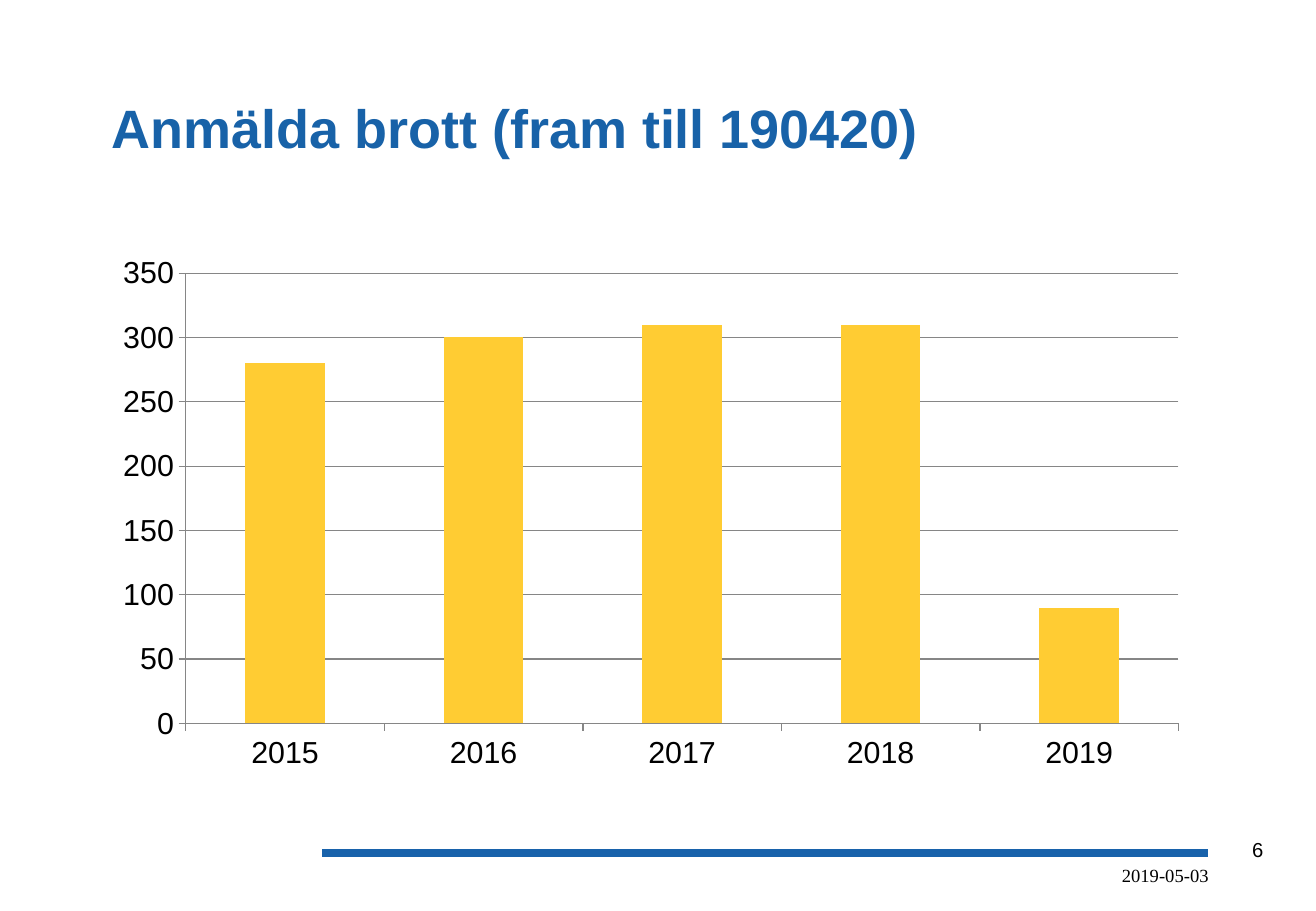
from lxml import etree
from pptx import Presentation
from pptx.chart import data as chart_data
from pptx.dml.color import RGBColor
from pptx.enum import chart as chart_enum, shapes, text
from pptx.oxml import ns
from pptx.util import Pt

BLUE = "1862A8"
RULE_BLUE = "1862AB"
YELLOW = "FFCC33"
GREY = "868686"
BLACK = "000000"

CRIMES_BY_YEAR = {"2015": 280, "2016": 300, "2017": 310, "2018": 310, "2019": 90}


def color(hex_string):
    return RGBColor.from_string(hex_string)


def style_font(font, name, size, hex_string, bold=False):
    font.name = name
    font.size = Pt(size)
    font.bold = bold
    font.color.rgb = color(hex_string)


def set_title(slide, wording):
    title = slide.shapes.title
    title.left, title.top, title.width, title.height = Pt(60), Pt(30), Pt(656), Pt(90)
    frame = title.text_frame
    frame.text = wording
    frame.vertical_anchor = text.MSO_ANCHOR.MIDDLE
    frame.margin_left = frame.margin_right = Pt(6)
    frame.paragraphs[0].alignment = text.PP_ALIGN.LEFT
    style_font(frame.paragraphs[0].runs[0].font, "Arial", 32, BLUE, bold=True)


def add_label(slide, wording, left, top, width, height, font_name, size, align):
    frame = slide.shapes.add_textbox(Pt(left), Pt(top), Pt(width), Pt(height)).text_frame
    frame.word_wrap = True
    frame.text = wording
    frame.paragraphs[0].alignment = align
    style_font(frame.paragraphs[0].runs[0].font, font_name, size, BLACK)


def add_rule(slide, left, right, y):
    rule = slide.shapes.add_connector(
        shapes.MSO_CONNECTOR.STRAIGHT, Pt(left), Pt(y), Pt(right), Pt(y))
    rule.line.color.rgb = color(RULE_BLUE)
    rule.line.width = Pt(4.5)
    etree.SubElement(rule._element.spPr, ns.qn("a:effectLst"))


def style_line(line):
    line.color.rgb = color(GREY)
    line.width = Pt(0.75)


def add_crime_chart(slide):
    crimes = chart_data.CategoryChartData()
    crimes.categories = list(CRIMES_BY_YEAR)
    crimes.add_series("Series 1", list(CRIMES_BY_YEAR.values()))
    chart = slide.shapes.add_chart(
        chart_enum.XL_CHART_TYPE.COLUMN_CLUSTERED,
        Pt(60), Pt(145.5), Pt(651.5), Pt(317), crimes).chart
    chart.has_legend = False
    chart.has_title = False
    style_font(chart.font, "Arial", 18, BLACK)

    # Columns
    plot = chart.plots[0]
    plot.gap_width = 150
    plot.vary_by_categories = False
    columns = plot.series[0].format.fill
    columns.solid()
    columns.fore_color.rgb = color(YELLOW)

    # Axes and gridlines
    for axis in (chart.category_axis, chart.value_axis):
        axis.major_tick_mark = chart_enum.XL_TICK_MARK.OUTSIDE
        style_line(axis.format.line)
    counts = chart.value_axis
    counts.minimum_scale, counts.maximum_scale, counts.major_unit = 0, 350, 50
    counts.has_major_gridlines = True
    style_line(counts.major_gridlines.format.line)


def main():
    deck = Presentation()
    deck.slide_width, deck.slide_height = Pt(780), Pt(540)
    slide = deck.slides.add_slide(deck.slide_layouts[5])

    # Footer
    add_label(slide, "6", 735, 493, 32, 21.5, "Arial", 12, text.PP_ALIGN.LEFT)
    add_rule(slide, 191, 716, 505.5)
    add_label(slide, "2019-05-03", 243.5, 508.5, 480, 21, "Times New Roman", 11,
              text.PP_ALIGN.RIGHT)

    # Content
    set_title(slide, "Anmälda brott (fram till 190420)")
    add_crime_chart(slide)

    deck.save("out.pptx")


if __name__ == "__main__":
    main()
